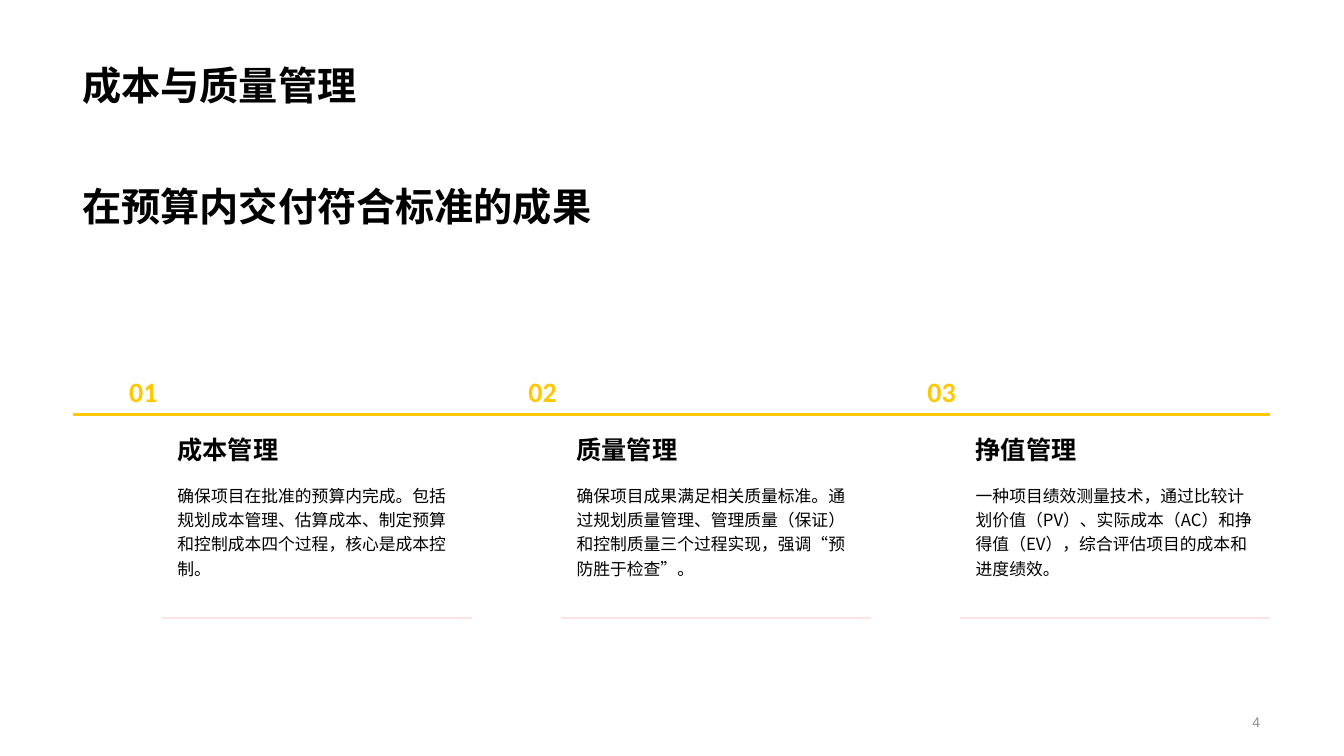
import pptx
import pptx.dml.color
import pptx.enum.lang
import pptx.enum.shapes
import pptx.enum.text
import pptx.oxml
import pptx.oxml.ns
import pptx.util

Pt = pptx.util.Pt
ALIGN = pptx.enum.text.PP_ALIGN
ANCHOR = pptx.enum.text.MSO_ANCHOR

BLACK = pptx.dml.color.RGBColor(0x00, 0x00, 0x00)
GOLD = pptx.dml.color.RGBColor(0xFF, 0xC8, 0x03)
PINK = pptx.dml.color.RGBColor(0xFE, 0xE3, 0xE3)
GREY = pptx.dml.color.RGBColor(0x8C, 0x8C, 0x8C)

HAN = "Noto Sans CJK SC"
DRAWING = 'xmlns:a="http://schemas.openxmlformats.org/drawingml/2006/main"'

HEADING = {"font": {"name": HAN, "size": Pt(28), "bold": True}, "color": BLACK,
           "frame": {"vertical_anchor": ANCHOR.BOTTOM}}
TOPIC = {**HEADING, "font": {"name": HAN, "size": Pt(18), "bold": True}}
BODY = {"font": {"name": HAN, "size": Pt(12)}, "color": BLACK,
        "para": {"line_spacing": 1.2}}
NUMBER = {"font": {"name": "Calibri", "size": Pt(20), "bold": True}, "color": GOLD,
          "frame": {"vertical_anchor": ANCHOR.BOTTOM, "word_wrap": False},
          "para": {"alignment": ALIGN.RIGHT}}
PAGE_NUMBER = {"font": {"name": "Arial", "size": Pt(10)}, "color": GREY,
               "frame": {"vertical_anchor": ANCHOR.MIDDLE},
               "para": {"alignment": ALIGN.RIGHT}}

LEFT = 51.8
PITCH = 285.1
TEXT_INDENT = 67.9
TEXT_WIDTH = PITCH - TEXT_INDENT

TOPICS = [
    ("成本管理",
     "确保项目在批准的预算内完成。包括规划成本管理、估算成本、制定预算和控制成本四个过程，核心是成本控制。"),
    ("质量管理",
     "确保项目成果满足相关质量标准。通过规划质量管理、管理质量（保证）和控制质量三个过程实现，强调“预防胜于检查”。"),
    ("挣值管理",
     "一种项目绩效测量技术，通过比较计划价值（PV）、实际成本（AC）和挣得值（EV），综合评估项目的成本和进度绩效。"),
]


def add_text(page, text, left, top, width, height, style):
    box = page.shapes.add_textbox(Pt(left), Pt(top), Pt(width), Pt(height))
    frame = box.text_frame
    para = frame.paragraphs[0]
    span = para.add_run()
    span.text = text
    formats = [
        (frame, {"word_wrap": True, **style.get("frame", {})}),
        (para, style.get("para", {})),
        (span.font, style["font"]),
        (span.font.color, {"rgb": style["color"]}),
    ]
    for target, values in formats:
        for name, value in values.items():
            setattr(target, name, value)
    if style["font"]["name"] == HAN:
        span.font.language_id = pptx.enum.lang.MSO_LANGUAGE_ID.SIMPLIFIED_CHINESE
        # East Asian glyphs take their typeface from a:ea, after a:latin
        latin = span.font._element.find(pptx.oxml.ns.qn("a:latin"))
        latin.addnext(pptx.oxml.parse_xml(f'<a:ea {DRAWING} typeface="{HAN}"/>'))


def add_rule(page, left, right, y, color, weight):
    """Draw a horizontal line without a shadow."""
    rule = page.shapes.add_connector(
        pptx.enum.shapes.MSO_CONNECTOR.STRAIGHT, Pt(left), Pt(y), Pt(right), Pt(y))
    rule.line.color.rgb = color
    rule.line.width = Pt(weight)
    rule._element.spPr.append(pptx.oxml.parse_xml(f"<a:effectLst {DRAWING}/>"))


deck = pptx.Presentation()
deck.slide_width, deck.slide_height = Pt(960), Pt(540)
page = deck.slides.add_slide(deck.slide_layouts[6])

add_text(page, "成本与质量管理", LEFT, 10, 3 * PITCH, 70.6, HEADING)
add_text(page, "在预算内交付符合标准的成果", LEFT, 80.6, 499, 87.1, HEADING)

for index, (topic, description) in enumerate(TOPICS):
    left = LEFT + index * PITCH
    right = left + PITCH
    text_left = left + TEXT_INDENT
    add_rule(page, left, right, 296, GOLD, 2)
    add_rule(page, text_left - 4, right, 441.4, PINK, 1)
    add_text(page, f"{index + 1:02}", text_left - 36.7, 263.5, 36.7, 31.7, NUMBER)
    add_text(page, topic, text_left, 294.5, TEXT_WIDTH, 41, TOPIC)
    add_text(page, description, text_left, 340.6, TEXT_WIDTH, 99.4, BODY)

add_text(page, "4", 619.2, 504.7, 288, 21.6, PAGE_NUMBER)

deck.save("out.pptx")
